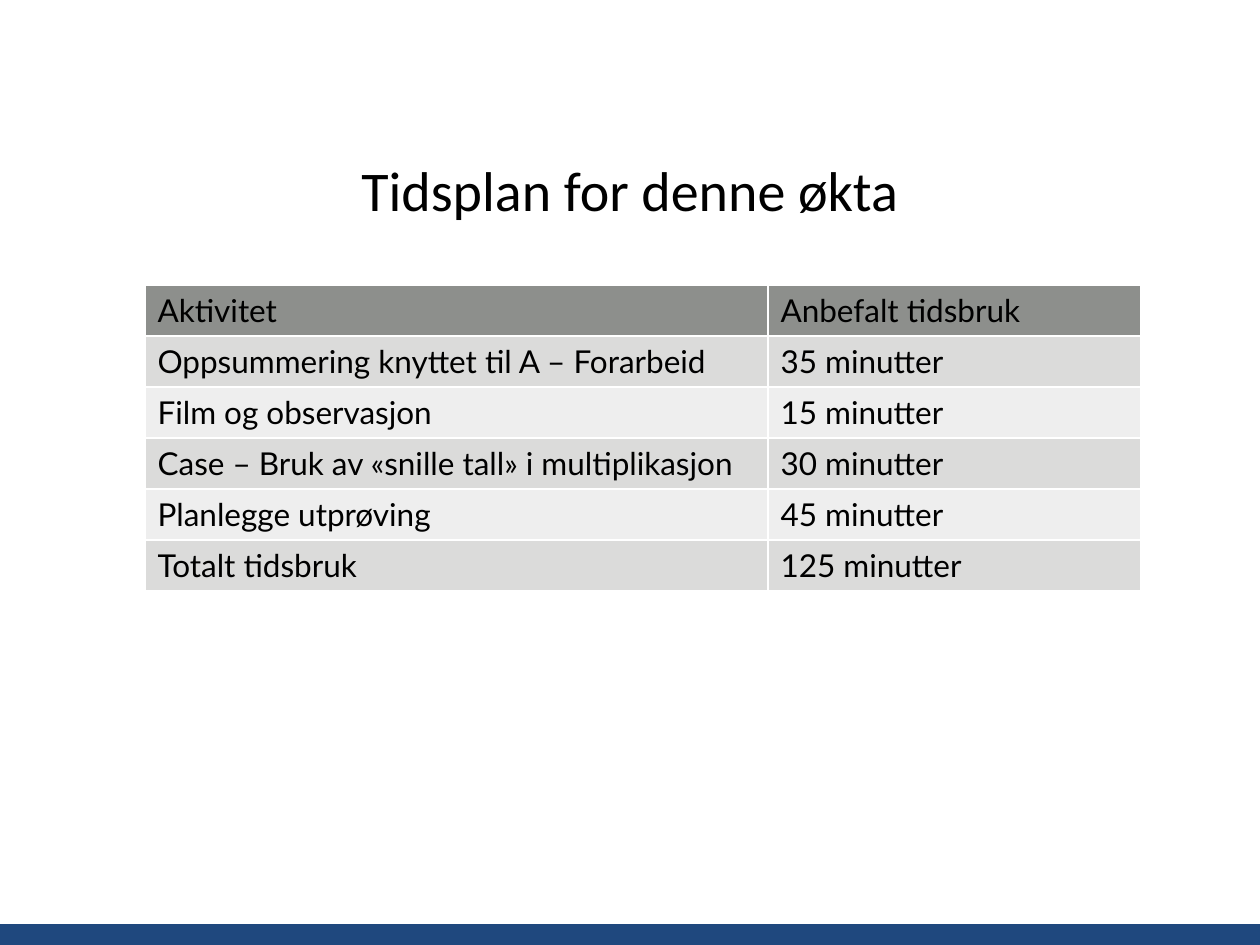
"""Builds the session timetable slide."""
import dataclasses

import pptx
import pptx.dml.color
import pptx.enum.shapes
import pptx.enum.text
import pptx.util

EMU_PER_PX = 914400 / 126
SLIDE_SIZE = (1260, 945)
SCHEDULE = [
    ("Aktivitet", "Anbefalt tidsbruk"),
    ("Oppsummering knyttet til A – Forarbeid", "35 minutter"),
    ("Film og observasjon", "15 minutter"),
    ("Case – Bruk av «snille tall» i multiplikasjon", "30 minutter"),
    ("Planlegge utprøving", "45 minutter"),
    ("Totalt tidsbruk", "125 minutter"),
]


@dataclasses.dataclass(frozen=True)
class Theme:
    title_font: str = "Calibri"
    table_font: str = "Lato"
    title_size: int = 32
    table_size: int = 18
    text: str = "000000"
    footer: str = "1F487E"
    header: str = "8D8F8C"
    bands: tuple = ("EEEEEE", "DBDBDA")


def px(length):
    return pptx.util.Emu(round(length * EMU_PER_PX))


def rgb(value):
    return pptx.dml.color.RGBColor.from_string(value)


class SlideBuilder:
    def __init__(self, slide, theme):
        self.slide = slide
        self.theme = theme

    def style(self, paragraph, font, size):
        for run in paragraph.runs:
            run.font.name = font
            run.font.size = pptx.util.Pt(size)
            run.font.bold = False
            run.font.color.rgb = rgb(self.theme.text)

    def bar(self, left, top, width, height):
        footer = self.slide.shapes.add_shape(
            pptx.enum.shapes.MSO_SHAPE.RECTANGLE,
            px(left), px(top), px(width), px(height))
        footer.shadow.inherit = False
        footer.fill.solid()
        footer.fill.fore_color.rgb = rgb(self.theme.footer)
        footer.line.fill.background()

    def title(self, text, left, top, width, height):
        heading = self.slide.shapes.title
        heading.left, heading.top = px(left), px(top)
        heading.width, heading.height = px(width), px(height)
        frame = heading.text_frame
        frame.text = text
        frame.vertical_anchor = pptx.enum.text.MSO_ANCHOR.MIDDLE
        frame.paragraphs[0].alignment = pptx.enum.text.PP_ALIGN.CENTER
        self.style(frame.paragraphs[0], self.theme.title_font, self.theme.title_size)

    def table(self, rows, left, top, column_widths, row_height):
        schedule = self.slide.shapes.add_table(
            len(rows), len(column_widths), px(left), px(top),
            px(sum(column_widths)), px(row_height * len(rows))).table
        for column, width in zip(schedule.columns, column_widths):
            column.width = px(width)
        for index, texts in enumerate(rows):
            schedule.rows[index].height = px(row_height)
            fill = self.theme.bands[index % 2] if index else self.theme.header
            for cell, text in zip(schedule.rows[index].cells, texts):
                cell.text_frame.text = text
                cell.fill.solid()
                cell.fill.fore_color.rgb = rgb(fill)
                self.style(cell.text_frame.paragraphs[0],
                           self.theme.table_font, self.theme.table_size)


def main():
    presentation = pptx.Presentation()
    presentation.slide_width, presentation.slide_height = map(px, SLIDE_SIZE)
    title_only = presentation.slide_layouts[5]
    builder = SlideBuilder(presentation.slides.add_slide(title_only), Theme())
    builder.bar(0, 924, 1260, 21)
    builder.title("Tidsplan for denne økta", 63, 126, 1134, 127)
    builder.table(SCHEDULE, 145, 285, (623, 373), 51)
    presentation.save("out.pptx")


if __name__ == "__main__":
    main()
